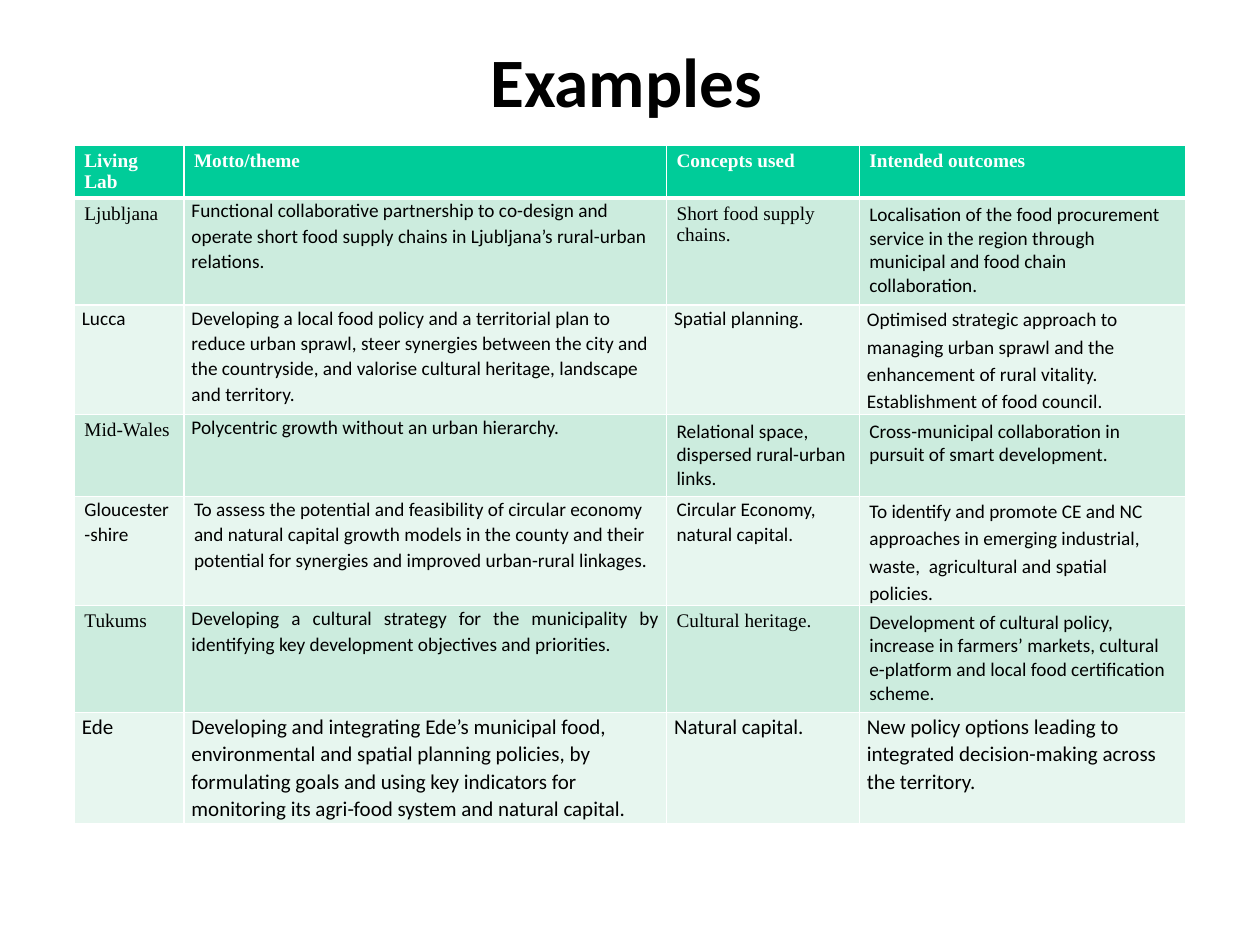
from dataclasses import dataclass, replace
from typing import Optional

from lxml.etree import SubElement
from pptx import Presentation
from pptx.dml.color import RGBColor as RGB
from pptx.enum.text import MSO_ANCHOR as ANCHOR, MSO_AUTO_SIZE as AUTO, PP_ALIGN as ALIGN
from pptx.oxml.ns import qn
from pptx.util import Inches, Pt


@dataclass(frozen=True)
class Theme:
    sans: str = "Calibri"
    serif: str = "Times New Roman"
    black: str = "000000"
    white: str = "FFFFFF"
    header: str = "00CC99"
    bands: tuple = ("CCECDE", "E7F6EF")
    title_size: float = 39.6
    body_size: float = 11
    large_size: float = 12
    rule: float = 1
    header_rule: float = 3


@dataclass(frozen=True)
class CellStyle:
    font: str
    side: float = 0.08
    top: float = 0.04
    spacing: Optional[float] = None
    size: float = Theme.body_size
    color: str = Theme.black
    bold: bool = False
    align: ALIGN = ALIGN.LEFT
    after: Optional[float] = None


SERIF = CellStyle(Theme.serif)
HEAD = replace(SERIF, color=Theme.white, bold=True)
SANS = CellStyle(Theme.sans)
TIGHT = CellStyle(Theme.sans, side=0.06, top=0, spacing=1.07)
TIGHT_LOOSE = replace(TIGHT, spacing=1.15)
JUSTIFIED = replace(TIGHT, align=ALIGN.JUSTIFY)
WIDE = replace(TIGHT, side=SANS.side)
WIDE_LOOSE = replace(WIDE, spacing=1.15)
LARGE = replace(TIGHT, size=Theme.large_size)
LARGE_AFTER = replace(LARGE, after=6)

COL_WIDTHS = (0.87, 3.83, 1.53, 2.59)

# Each row: height, cell texts, cell styles
ROWS = [
    (0.33, ("Living Lab", "Motto/theme", "Concepts used", "Intended outcomes"), (HEAD,) * 4),
    (0.85, (
        "Ljubljana",
        "Functional collaborative partnership to co-design and operate short food supply "
        "chains in Ljubljana’s rural-urban relations.",
        "Short food supply chains.",
        "Localisation of the food procurement service in the region through municipal "
        "and food chain collaboration.",
    ), (SERIF, TIGHT, SERIF, SANS)),
    (0.87, (
        "Lucca",
        "Developing a local food policy and a territorial plan to reduce urban sprawl, steer "
        "synergies between the city and the countryside, and valorise cultural heritage, "
        "landscape and territory.",
        "Spatial planning.",
        "Optimised strategic approach to managing urban sprawl and the enhancement of rural "
        "vitality. Establishment of food council.",
    ), (TIGHT, TIGHT, TIGHT, TIGHT_LOOSE)),
    (0.65, (
        "Mid-Wales",
        "Polycentric growth without an urban hierarchy.",
        "Relational space, dispersed rural-urban links.",
        "Cross-municipal collaboration in pursuit of smart development.",
    ), (SERIF, TIGHT, SANS, SANS)),
    (0.86, (
        "Gloucester-shire",
        "To assess the potential and feasibility of circular economy and natural capital "
        "growth models in the county and their potential for synergies and improved "
        "urban-rural linkages.",
        "Circular Economy, natural capital.",
        "To identify and promote CE and NC approaches in emerging industrial, "
        "waste,  agricultural and spatial policies.",
    ), (WIDE, WIDE, WIDE, WIDE_LOOSE)),
    (0.85, (
        "Tukums",
        "Developing a cultural strategy for the municipality by identifying key development "
        "objectives and priorities.",
        "Cultural heritage.",
        "Development of cultural policy, increase in farmers’ markets, cultural e-platform "
        "and local food certification scheme.",
    ), (SERIF, JUSTIFIED, SERIF, SANS)),
    (0.88, (
        "Ede",
        "Developing and integrating Ede’s municipal food, environmental and spatial planning "
        "policies, by formulating goals and using key indicators for monitoring its "
        "agri-food system and natural capital.",
        "Natural capital.",
        "New policy options leading to integrated decision-making across the territory.",
    ), (LARGE, LARGE_AFTER, LARGE, LARGE)),
]


class SlideBuilder:
    def __init__(self, slide, theme):
        self.slide = slide
        self.theme = theme

    def add_run(self, p, text, font, size, color, bold):
        r = p.add_run()
        r.text = text
        r.font.name = font
        r.font.size = Pt(size)
        r.font.bold = bold
        r.font.color.rgb = RGB.from_string(color)

    def title(self, text, left, top, width, height):
        sp = self.slide.shapes.title
        sp.left, sp.top, sp.width, sp.height = map(Inches, (left, top, width, height))
        tf = sp.text_frame
        tf.word_wrap = True
        tf.auto_size = AUTO.NONE
        tf.vertical_anchor = ANCHOR.MIDDLE
        p = tf.paragraphs[0]
        p.alignment = ALIGN.CENTER
        self.add_run(p, text, self.theme.sans, self.theme.title_size, self.theme.black, True)

    def borders(self, cell, top, bottom):
        """Rule all four sides; must run before the fill, which follows the lines in tcPr."""
        props = cell._tc.get_or_add_tcPr()
        rule = self.theme.rule
        for side, width in (("L", rule), ("R", rule), ("T", top), ("B", bottom)):
            ln = SubElement(props, qn(f"a:ln{side}"), w=str(Pt(width)))
            fill = SubElement(ln, qn("a:solidFill"))
            SubElement(fill, qn("a:srgbClr"), val=self.theme.white)

    def cell(self, cell, text, style, fill):
        cell.margin_left = cell.margin_right = Inches(style.side)
        cell.margin_top = cell.margin_bottom = Inches(style.top)
        cell.vertical_anchor = ANCHOR.TOP
        cell.fill.solid()
        cell.fill.fore_color.rgb = RGB.from_string(fill)
        p = cell.text_frame.paragraphs[0]
        p.alignment = style.align
        if style.spacing:
            p.line_spacing = style.spacing
        if style.after:
            p.space_after = Pt(style.after)
        self.add_run(p, text, style.font, style.size, style.color, style.bold)

    def table(self, rows, col_widths, left, top):
        theme = self.theme
        height = sum(row[0] for row in rows)
        frame = self.slide.shapes.add_table(
            len(rows), len(col_widths), Inches(left), Inches(top),
            Inches(sum(col_widths)), Inches(height))
        table = frame.table
        for column, width in zip(table.columns, col_widths):
            column.width = Inches(width)
        for i, (row_height, texts, styles) in enumerate(rows):
            table.rows[i].height = Inches(row_height)
            fill = theme.bands[(i - 1) % 2] if i else theme.header
            above = theme.header_rule if i == 1 else theme.rule
            below = theme.header_rule if i == 0 else theme.rule
            for j, (text, style) in enumerate(zip(texts, styles)):
                cell = table.cell(i, j)
                self.borders(cell, above, below)
                self.cell(cell, text, style, fill)


def main():
    prs = Presentation()
    prs.slide_width, prs.slide_height = Inches(10), Inches(7.5)
    title_only = prs.slide_layouts[5]
    builder = SlideBuilder(prs.slides.add_slide(title_only), Theme())
    builder.title("Examples", 0.66, 0.52, 8.62, 0.23)
    builder.table(ROWS, COL_WIDTHS, 0.59, 1.15)
    prs.save("out.pptx")


if __name__ == "__main__":
    main()
